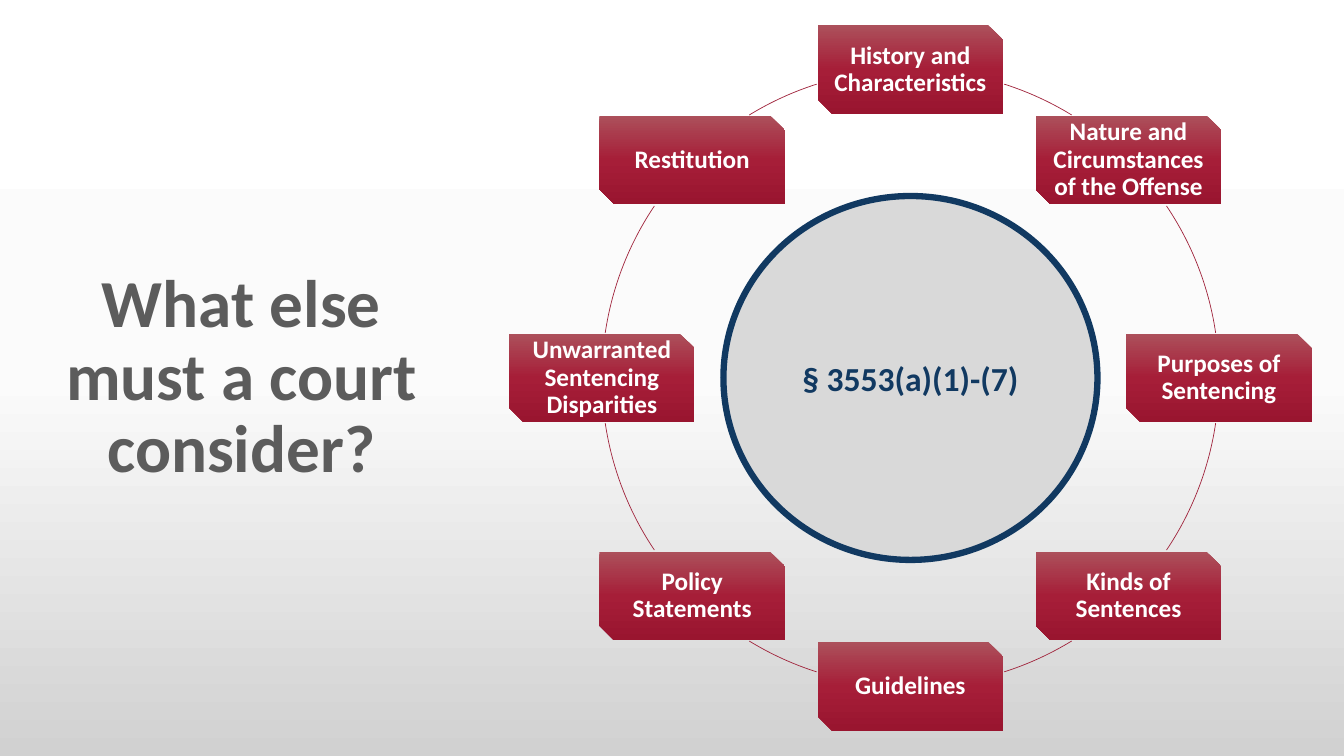
from copy import deepcopy
from dataclasses import dataclass
from math import cos, radians, sin

from pptx import Presentation
from pptx.dml.color import RGBColor
from pptx.enum.shapes import MSO_SHAPE
from pptx.enum.text import MSO_ANCHOR, PP_ALIGN
from pptx.oxml.ns import qn
from pptx.util import Inches, Pt

ARC = MSO_SHAPE.ARC
CARD = MSO_SHAPE.SNIP_2_DIAG_RECTANGLE
OVAL = MSO_SHAPE.OVAL
MIDDLE = MSO_ANCHOR.MIDDLE
CENTER = PP_ALIGN.CENTER


@dataclass(frozen=True)
class Theme:
    font: str = "Calibri"
    title: str = "5C5C5C"
    navy: str = "113961"
    hub: str = "D9D9D9"
    ring: str = "A0243C"
    white: str = "FFFFFF"
    card_stops: tuple = ("AC505B", "A61E38", "99152F")
    page_stops: tuple = ("FFFFFF", "FBFBFB", "D1D1D1")
    title_size: int = 48
    hub_size: int = 24
    card_size: int = 18


THEME = Theme()
FACTORS = [
    "History and Characteristics",
    "Nature and Circumstances of the Offense",
    "Purposes of Sentencing",
    "Kinds of Sentences",
    "Guidelines",
    "Policy Statements",
    "Unwarranted Sentencing Disparities",
    "Restitution",
]
ARC_SPANS = [(8.4, 33.9), (58.5, 72.3)]
CARD_W, CARD_H = 1.84, 0.88
HUB_W, HUB_H = 3.71, 3.61


def rgb(value):
    return RGBColor.from_string(value)


def fill_gradient(fill, element, colors):
    fill.gradient()
    fill.gradient_angle = 270
    stop_list = next(element.iter(qn("a:gsLst")))
    stop_list.insert(1, deepcopy(stop_list[0]))
    for i, (stop, color) in enumerate(zip(fill.gradient_stops, colors)):
        stop.position = i / 2
        stop.color.rgb = rgb(color)


def set_text(sp, text, size, color, spacing=None):
    tf = sp.text_frame
    tf.word_wrap = True
    tf.vertical_anchor = MIDDLE
    tf.text = text
    p = tf.paragraphs[0]
    p.alignment = CENTER
    p.line_spacing = spacing
    font = p.runs[0].font
    font.name = THEME.font
    font.size = Pt(size)
    font.bold = True
    font.color.rgb = rgb(color)


def add_shape(slide, kind, x, y, w, h):
    sp = slide.shapes.add_shape(kind, Inches(x), Inches(y), Inches(w), Inches(h))
    sp.shadow.inherit = False
    return sp


def add_arc(slide, box, start, end):
    sp = add_shape(slide, ARC, *box)
    sp.adjustments[0] = start * 0.6
    sp.adjustments[1] = end * 0.6
    sp.fill.background()
    sp.line.color.rgb = rgb(THEME.ring)
    sp.line.width = Pt(0.5)


def add_card(slide, cx, cy, text):
    sp = add_shape(slide, CARD, cx - CARD_W / 2, cy - CARD_H / 2, CARD_W, CARD_H)
    fill_gradient(sp.fill, sp._element, THEME.card_stops)
    sp.line.fill.background()
    set_text(sp, text, THEME.card_size, THEME.white, 0.9)
    tf = sp.text_frame
    tf.margin_left = tf.margin_right = Inches(0.09)
    tf.margin_top = tf.margin_bottom = Inches(0.09)


def add_hub(slide, cx, cy, text):
    sp = add_shape(slide, OVAL, cx - HUB_W / 2, cy - HUB_H / 2, HUB_W, HUB_H)
    sp.fill.solid()
    sp.fill.fore_color.rgb = rgb(THEME.hub)
    sp.line.color.rgb = rgb(THEME.navy)
    sp.line.width = Pt(4.5)
    set_text(sp, text, THEME.hub_size, THEME.navy)


def add_cycle(slide, x, y, size):
    radius = size / 2
    cx, cy = x + radius, y + radius
    for base in (0, 180):
        for start, end in ARC_SPANS:
            add_arc(slide, (x, y, size, size), base + start, base + end)
            add_arc(slide, (x, y, size, size), base + 180 - end, base + 180 - start)
    for i, factor in enumerate(FACTORS):
        angle = radians(i * 360 / len(FACTORS) - 90)
        add_card(slide, cx + radius * cos(angle), cy + radius * sin(angle), factor)
    add_hub(slide, cx, cy, "§ 3553(a)(1)-(7)")


def add_title(slide, x, y, w, h):
    sp = slide.shapes.add_textbox(Inches(x), Inches(y), Inches(w), Inches(h))
    set_text(sp, "What else must a court consider?", THEME.title_size, THEME.title, 0.9)


def main():
    prs = Presentation()
    prs.slide_width = Inches(13.33)
    prs.slide_height = Inches(7.5)
    slide = prs.slides.add_slide(prs.slide_layouts[6])
    fill_gradient(slide.background.fill, slide._element, THEME.page_stops)
    add_cycle(slide, 5.97, 0.69, 6.12)
    add_title(slide, 0.55, 2.79, 3.69, 1.93)
    prs.save("out.pptx")


if __name__ == "__main__":
    main()
